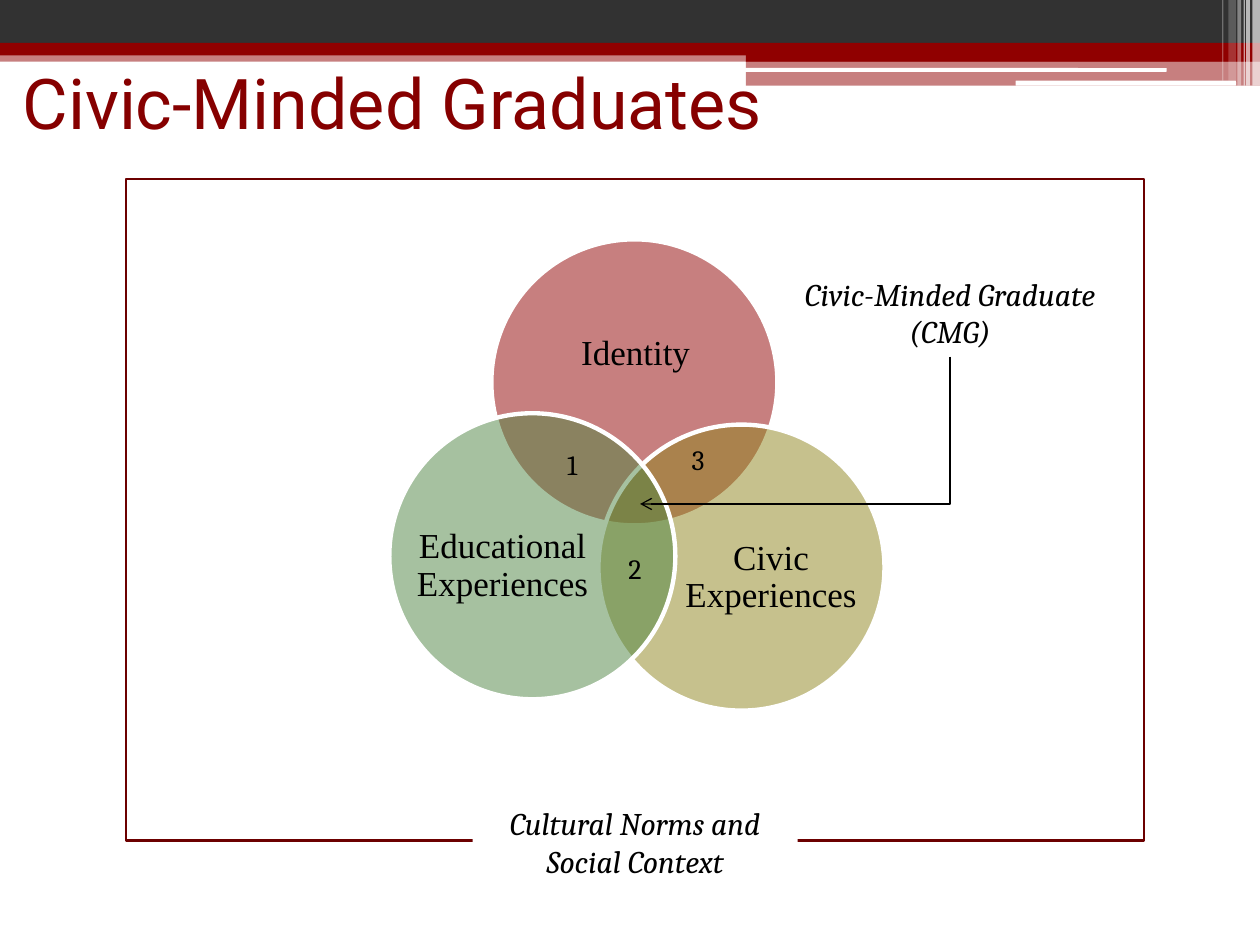
from dataclasses import dataclass

from lxml import etree
from pptx import Presentation
from pptx import util as u
from pptx.dml.color import RGBColor
from pptx.enum import shapes, text
from pptx.oxml.ns import qn


@dataclass(frozen=True)
class Theme:
    red: str = "900000"
    title: str = "860000"
    frame: str = "6C0000"
    dark: str = "323232"
    olive: str = "8F851C"
    green: str = "4E8542"
    white: str = "FFFFFF"
    black: str = "000000"
    title_font: str = "Roboto"
    circle_font: str = "Times New Roman"
    note_font: str = "Cambria"
    title_size: int = 40
    circle_size: int = 20
    note_size: int = 18
    number_size: int = 16


T = Theme()
WIDTH, HEIGHT = 10, 7.5
CIRCLE = 2.27
RECT = shapes.MSO_SHAPE.RECTANGLE
ROUND = shapes.MSO_SHAPE.ROUNDED_RECTANGLE
OVAL = shapes.MSO_SHAPE.OVAL


def inches(box):
    return [u.Inches(v) for v in box]


def add_box(parent, box, kind=RECT, fill=None, alpha=100, line=None, weight=1):
    """Add a preset shape; alpha is the fill's opacity in percent."""
    sp = parent.add_shape(kind, *inches(box))
    sp.shadow.inherit = False
    if fill:
        sp.fill.solid()
        sp.fill.fore_color.rgb = RGBColor.from_string(fill)
        if alpha < 100:
            color = sp.fill._xPr.find(".//" + qn("a:srgbClr"))
            etree.SubElement(color, qn("a:alpha"), val=str(alpha * 1000))
    else:
        sp.fill.background()
    if line:
        sp.line.color.rgb = RGBColor.from_string(line)
        sp.line.width = u.Pt(weight)
    else:
        sp.line.fill.background()
    return sp


def write(sp, words, font, size, color=T.black, italic=False,
          align=text.PP_ALIGN.CENTER, anchor=text.MSO_ANCHOR.TOP,
          inset=None, spacing=None, grow=False):
    tf = sp.text_frame
    tf.word_wrap = True
    tf.vertical_anchor = anchor
    tf.auto_size = (text.MSO_AUTO_SIZE.SHAPE_TO_FIT_TEXT if grow
                    else text.MSO_AUTO_SIZE.NONE)
    if inset is not None:
        tf.margin_left = tf.margin_right = u.Inches(inset)
        tf.margin_top = tf.margin_bottom = u.Inches(inset)
    p = tf.paragraphs[0]
    p.alignment = align
    if spacing:
        p.line_spacing = spacing
    r = p.add_run()
    r.text = words
    r.font.name = font
    r.font.size = u.Pt(size)
    r.font.italic = italic
    r.font.color.rgb = RGBColor.from_string(color)


def add_banner(s):
    bands = [
        (0, 0.4, WIDTH, 0.09, T.red, 50),
        (0, 0, WIDTH, 0.34, T.dark, 100),
        (0, 0.34, WIDTH, 0.1, T.red, 100),
        (5.92, 0.39, 4.08, 0.1, T.red, 100),
        (5.92, 0.48, 4.08, 0.2, T.red, 50),
    ]
    for *box, fill, alpha in bands:
        add_box(s.shapes, box, fill=fill, alpha=alpha)
    for box in [(5.91, 0.54, 3.35, 0.03), (8.06, 0.64, 1.75, 0.04)]:
        add_box(s.shapes, box, ROUND, T.white)
    stripes = [(9.94, 0.06, 0.68, 65), (9.89, 0.03, 0.68, 65),
               (9.87, 0.01, 0.68, 60), (9.82, 0.03, 0.68, 40),
               (9.75, 0.06, 0.64, 20), (9.7, 0.01, 0.64, 30)]
    for left, width, height, alpha in stripes:
        add_box(s.shapes, (left, 0, width, height), fill=T.white, alpha=alpha)


def add_title(s, words):
    title = s.shapes.title
    title.left, title.top, title.width, title.height = inches(
        (0.08, 0.42, 8.5, 0.7))
    write(title, words, T.title_font, T.title_size, T.title,
          align=text.PP_ALIGN.LEFT)
    s.shapes._spTree.append(title._element)  # in front of the banner


def add_venn(s):
    circles = [
        ("Identity", T.red, (3.9, 1.9), (4.21, 2.3, 1.67, 1.02)),
        ("Civic Experiences", T.olive, (4.75, 3.37), (5.44, 3.96, 1.36, 1.25)),
        ("Educational Experiences", T.green, (3.09, 3.28),
         (3.31, 3.87, 1.36, 1.25)),
    ]
    group = s.shapes.add_group_shape().shapes
    for words, fill, corner, label in circles:
        add_box(group, (*corner, CIRCLE, CIRCLE), OVAL, fill, 50, T.white, 2.5)
        write(group.add_textbox(*inches(label)), words, T.circle_font,
              T.circle_size, anchor=text.MSO_ANCHOR.MIDDLE, inset=0,
              spacing=0.9)


def add_elbow_arrow(s, start, end):
    """Draw a line down from start, then left to an arrowhead at end."""
    (x1, y1), (x2, y2) = start, end
    drop, run = y2 - y1, x1 - x2
    mid_x, mid_y = (x1 + x2) / 2, (y1 + y2) / 2
    # The one-bend preset goes right, then down; a quarter turn fits it here.
    cxn = s.shapes.add_connector(
        shapes.MSO_CONNECTOR.ELBOW,
        *inches((mid_x - drop / 2, mid_y - run / 2,
                 mid_x + drop / 2, mid_y + run / 2)))
    cxn.line.color.rgb = RGBColor.from_string(T.black)
    cxn.line.width = u.Pt(0.75)
    props = cxn._element.spPr
    props.find(qn("a:xfrm")).set("rot", str(90 * 60000))
    props.find(qn("a:prstGeom")).set("prst", "bentConnector2")
    etree.SubElement(props.find(qn("a:ln")), qn("a:tailEnd"), type="arrow")
    etree.SubElement(props, qn("a:effectLst"))


def add_notes_and_numbers(s):
    context = add_box(s.shapes, (3.75, 6.33, 2.58, 0.71), fill=T.white)
    graduate = s.shapes.add_textbox(*inches((6.25, 2.13, 2.58, 0.71)))
    for sp, words in [(context, "Cultural Norms and Social Context"),
                      (graduate, "Civic-Minded Graduate (CMG)")]:
        write(sp, words, T.note_font, T.note_size, italic=True, grow=True)
    add_elbow_arrow(s, (7.54, 2.83), (5.08, 4))
    overlaps = [(4.33, 3.5), (4.83, 4.33), (5.33, 3.46)]
    for number, corner in enumerate(overlaps, 1):
        sp = s.shapes.add_textbox(*inches((*corner, 0.42, 0.37)))
        write(sp, str(number), T.note_font, T.number_size, grow=True)


def main():
    prs = Presentation()
    prs.slide_width, prs.slide_height = inches((WIDTH, HEIGHT))
    s = prs.slides.add_slide(prs.slide_layouts[5])
    add_banner(s)
    add_box(s.shapes, (1, 1.42, 8.08, 5.25), line=T.frame, weight=1.5)
    add_title(s, "Civic-Minded Graduates")
    add_venn(s)
    add_notes_and_numbers(s)
    prs.save("out.pptx")


if __name__ == "__main__":
    main()
